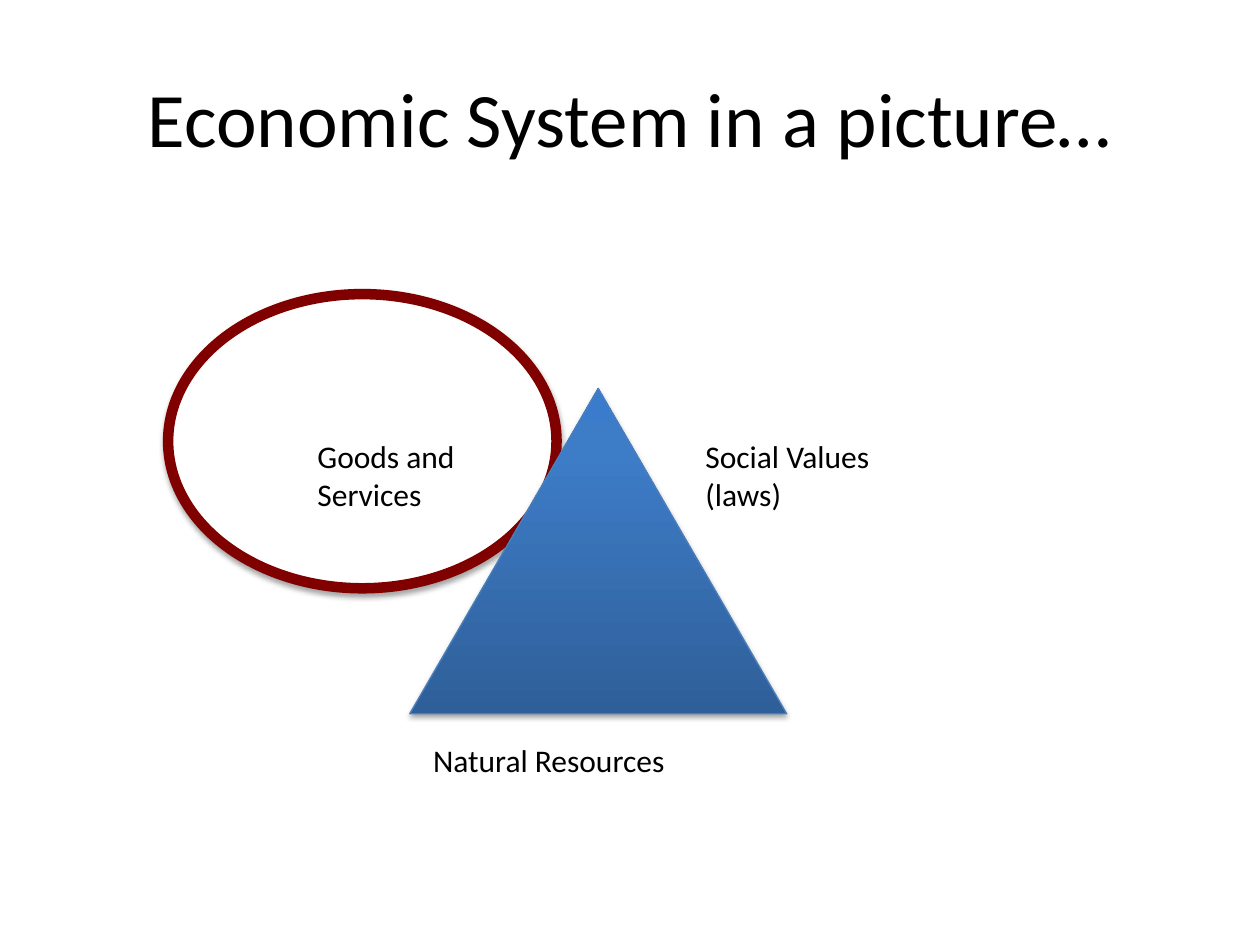
from copy import deepcopy
from dataclasses import dataclass

from lxml.etree import SubElement as Sub
from pptx import Presentation
from pptx.dml.color import RGBColor as Rgb
from pptx.enum.shapes import MSO_SHAPE as Kind
from pptx.enum.text import MSO_ANCHOR as Anchor, PP_ALIGN as Align
from pptx.oxml.ns import qn
from pptx.util import Cm, Pt


@dataclass(frozen=True)
class Theme:
    font: str = "Calibri"
    ink: Rgb = Rgb(0, 0, 0)
    paper: Rgb = Rgb(255, 255, 255)
    ring: Rgb = Rgb(0x80, 0, 0)
    edge: Rgb = Rgb(0x4B, 0x7E, 0xBC)
    blues: tuple = ((0, "2F5F99"), (0.8, "3D7CC7"), (1, "3A7CCB"))
    head: Pt = Pt(44)
    label: Pt = Pt(18)


theme = Theme()


def style(para, size):
    para.font.name = theme.font
    para.font.size = size
    para.font.color.rgb = theme.ink


def add_form(kind, box, color, width):
    form = slide.shapes.add_shape(kind, *map(Cm, box))
    form.line.color.rgb = color
    form.line.width = width
    form.shadow.inherit = False
    effects = form.element.spPr.find(qn("a:effectLst"))
    shade = Sub(effects, qn("a:outerShdw"), blurRad=str(Pt(3.1)),
                dist=str(Pt(1.8)), dir="5400000", rotWithShape="0")
    black = Sub(shade, qn("a:srgbClr"), val="000000")
    Sub(black, qn("a:alpha"), val="35000")
    return form


deck = Presentation()
deck.slide_width, deck.slide_height = Cm(25.4), Cm(19.05)
slide = deck.slides.add_slide(deck.slide_layouts[5])

title = slide.shapes.title
title.left, title.top, title.width, title.height = map(Cm, (1.27, 0.76, 22.86, 3.18))
title.text_frame.text = "Economic System in a picture…"
title.text_frame.vertical_anchor = Anchor.MIDDLE
para = title.text_frame.paragraphs[0]
para.alignment = Align.CENTER
style(para, theme.head)

oval = add_form(Kind.OVAL, (3.39, 5.93, 7.83, 5.93), theme.ring, Pt(6))
oval.fill.solid()
oval.fill.fore_color.rgb = theme.paper
title.element.addprevious(oval.element)

peak = add_form(Kind.ISOSCELES_TRIANGLE, (8.26, 7.83, 7.6, 6.56), theme.edge, Pt(0.75))
peak.fill.gradient()
peak.fill.gradient_angle = 90
first = peak.element.spPr.find(".//" + qn("a:gs"))
first.addnext(deepcopy(first))
for stop, (place, color) in zip(peak.fill.gradient_stops, theme.blues):
    stop.position = place
    stop.color.rgb = Rgb.from_string(color)

labels = (
    ("Natural Resources", (8.48, 14.81, 7.6, 1.3)),
    ("Social Values\n(laws)", (13.97, 8.69, 5.64, 2.31)),
    ("Goods and\nServices", (6.15, 8.69, 4.7, 2.31)),
)
for text, box in labels:
    frame = slide.shapes.add_textbox(*map(Cm, box)).text_frame
    frame.word_wrap = True
    frame.text = text
    for para in frame.paragraphs:
        style(para, theme.label)

deck.save("out.pptx")
